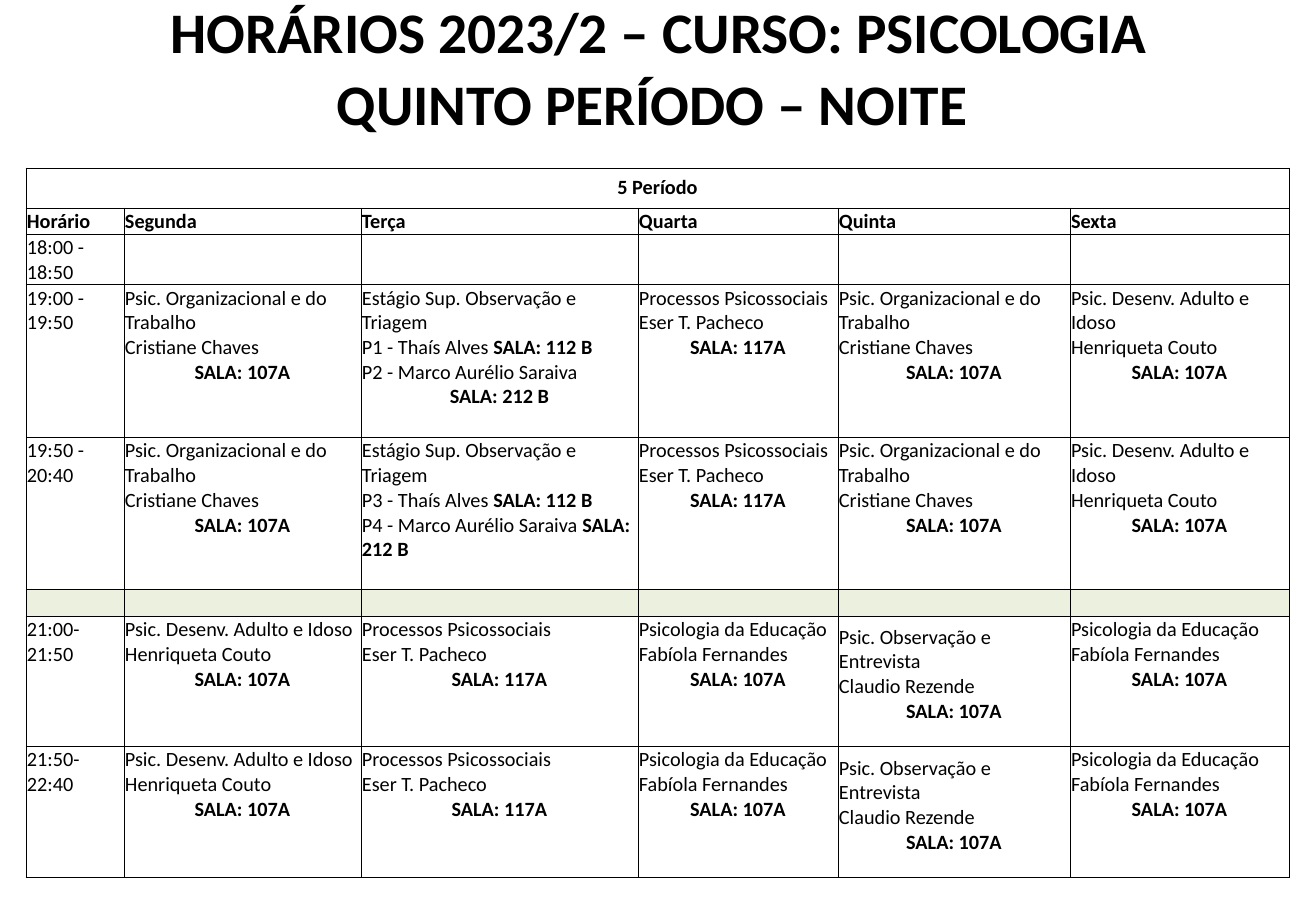
from dataclasses import dataclass

from lxml import etree
from pptx import Presentation, util as u
from pptx.dml.color import RGBColor
from pptx.enum import text
from pptx.oxml.ns import qn

PX = 914400 / 121.5


@dataclass(frozen=True)
class Theme:
    font: str = "Calibri"
    ink: str = "000000"
    break_fill: str = "EBF1DE"
    title_size: int = 34
    table_size: int = 12
    border_width: float = 0.5


def px(length):
    return u.Emu(round(length * PX))


def assign(target, values):
    for name, value in values.items():
        setattr(target, name, value)


class TimetableSlide:
    """Adds styled elements to one slide; lengths are in px."""

    def __init__(self, slide, theme):
        self.slide = slide
        self.theme = theme

    def add_text(self, paragraph, content, size, bold=False):
        """Add text in which *stars* mark bold and newlines break lines."""
        for index, piece in enumerate(content.split("*")):
            for number, line in enumerate(piece.split("\n")):
                if number:
                    paragraph.add_line_break()
                if line:
                    run = paragraph.add_run()
                    run.text = line
                    assign(run.font, {"name": self.theme.font, "size": u.Pt(size),
                                      "bold": bold or index % 2 == 1})
                    run.font.color.rgb = RGBColor.from_string(self.theme.ink)

    def title(self, box, lines):
        frame = self.slide.shapes.add_textbox(*map(px, box)).text_frame
        assign(frame, {"word_wrap": True, "vertical_anchor": text.MSO_ANCHOR.MIDDLE})
        for index, line in enumerate(lines):
            paragraph = frame.add_paragraph() if index else frame.paragraphs[0]
            assign(paragraph, {"alignment": text.PP_ALIGN.CENTER,
                               "line_spacing": 0.9, "space_after": u.Pt(6)})
            self.add_text(paragraph, line, self.theme.title_size, bold=True)

    def table(self, left, top, widths, heights):
        table = self.slide.shapes.add_table(
            len(heights), len(widths), px(left), px(top),
            px(sum(widths)), px(sum(heights))).table
        assign(table, {"first_row": False, "horz_banding": False})
        for column, width in zip(table.columns, widths):
            column.width = px(width)
        for row, height in zip(table.rows, heights):
            row.height = px(height)
        return table

    def border(self, cell):
        properties = cell._tc.get_or_add_tcPr()
        for side in ("a:lnL", "a:lnR", "a:lnT", "a:lnB"):
            line = etree.SubElement(properties, qn(side),
                                    w=str(u.Pt(self.theme.border_width)))
            fill = etree.SubElement(line, qn("a:solidFill"))
            etree.SubElement(fill, qn("a:srgbClr"), val=self.theme.ink)

    def cell(self, cell, paragraphs=(), bold=False, centred=False, bottom=False,
             margins=(1, 1, 1, 0), fill=None):
        """Fill a cell; paragraphs that start in bold are centred."""
        self.border(cell)
        sides = ("margin_left", "margin_top", "margin_right", "margin_bottom")
        assign(cell, dict(zip(sides, map(px, margins))))
        cell.vertical_anchor = text.MSO_ANCHOR.BOTTOM if bottom else text.MSO_ANCHOR.TOP
        if fill:
            cell.fill.solid()
            cell.fill.fore_color.rgb = RGBColor.from_string(fill)
        else:
            cell.fill.background()
        frame = cell.text_frame
        if not paragraphs:
            ending = etree.SubElement(frame.paragraphs[0]._p, qn("a:endParaRPr"))
            ending.set("sz", str(self.theme.table_size * 100))
        for index, content in enumerate(paragraphs):
            paragraph = frame.add_paragraph() if index else frame.paragraphs[0]
            middle = centred or content.startswith("*")
            paragraph.alignment = text.PP_ALIGN.CENTER if middle else text.PP_ALIGN.LEFT
            self.add_text(paragraph, content, self.theme.table_size, bold)


def lesson(subject, teacher, room="107A"):
    return [f"{subject}\n{teacher}", f"*SALA: {room}*"]


WORK = lesson("Psic. Organizacional e do Trabalho", "Cristiane Chaves")
SOCIAL = lesson("Processos Psicossociais", "Eser T. Pacheco", "117A")
ADULT = lesson("Psic. Desenv. Adulto e Idoso", "Henriqueta Couto")
EDUCATION = lesson("Psicologia da Educação", "Fabíola Fernandes")
INTERVIEW = lesson("Psic. Observação e Entrevista", "Claudio Rezende")
TRIAGE = "Estágio Sup. Observação e Triagem\n"
TRIAGE_EARLY = [TRIAGE + "P1 - Thaís Alves *SALA: 112 B*\nP2 - Marco Aurélio Saraiva",
                "*SALA: 212 B*"]
TRIAGE_LATE = [TRIAGE + "P3 - Thaís Alves *SALA: 112 B*\n"
               "P4 - Marco Aurélio Saraiva *SALA: 212 B*"]
LATE_LESSONS = [ADULT, SOCIAL, EDUCATION, INTERVIEW, EDUCATION]

HEADINGS = ["Horário", "Segunda", "Terça", "Quarta", "Quinta", "Sexta"]
SCHEDULE = [
    [["18:00 - 18:50"]] + [[]] * 5,
    [["19:00 - 19:50"], WORK, TRIAGE_EARLY, SOCIAL, WORK, ADULT],
    [["19:50 - 20:40"], WORK, TRIAGE_LATE, SOCIAL, WORK, ADULT],
    [[]] * 6,
    [["21:00-21:50"]] + LATE_LESSONS,
    [["21:50-22:40"]] + LATE_LESSONS,
]
BREAK_ROW = 3
COLUMN_WIDTHS = [98, 237, 277, 200, 232, 219]
ROW_HEIGHTS = [40, 26, 51, 153, 152, 27, 130, 131]


def main():
    presentation = Presentation()
    assign(presentation, {"slide_width": u.Inches(10.83), "slide_height": u.Inches(7.5)})
    theme = Theme()
    page = TimetableSlide(
        presentation.slides.add_slide(presentation.slide_layouts[6]), theme)
    page.title((66, -5, 1185, 152),
               ["HORÁRIOS 2023/2 – CURSO: PSICOLOGIA", "QUINTO PERÍODO – NOITE "])

    table = page.table(26, 168, COLUMN_WIDTHS, ROW_HEIGHTS)
    table.cell(0, 0).merge(table.cell(0, len(HEADINGS) - 1))
    for column, heading in enumerate(HEADINGS):
        page.cell(table.cell(0, column), [] if column else ["5 Período"],
                  bold=True, centred=True, margins=(15, 7, 15, 7))
        page.cell(table.cell(1, column), [heading], bold=True, bottom=True)
    for index, slots in enumerate(SCHEDULE):
        for column, paragraphs in enumerate(slots):
            interview = paragraphs is INTERVIEW
            page.cell(table.cell(index + 2, column), paragraphs,
                      bottom=interview or index == 0,
                      margins=(1, 1, 1, 23 if interview else 0),
                      fill=theme.break_fill if index == BREAK_ROW else None)
    presentation.save("out.pptx")


if __name__ == "__main__":
    main()
